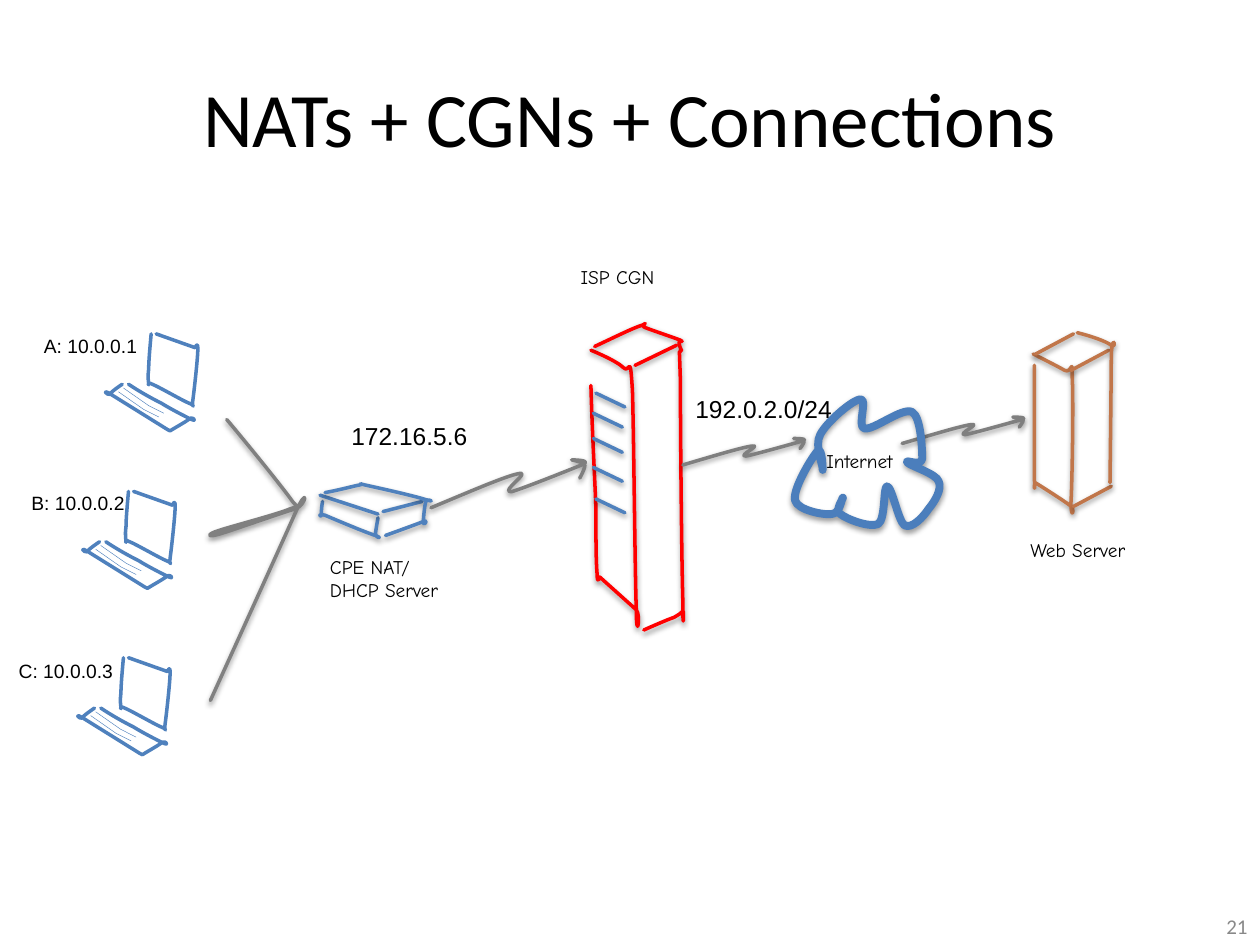
from lxml import etree
from pptx import Presentation
from pptx.dml.color import RGBColor
from pptx.enum import text
from pptx.oxml import ns
from pptx import util as u

HUES = {
    "ink": "000000", "page": "898989", "blue": "4F81BD", "cloud": "4B7EBC",
    "link": "808080", "wire": "7F7F7F", "red": "FF0000", "rust": "C1764A",
}
ALIGN = text.PP_ALIGN
SCREEN = [
    (1.2, 2.65), (1.19, 2.76, 1.18, 2.87, 1.18, 2.93), (1.17, 3, 1.18, 3.03, 1.18, 3.05),
    (1.19, 3.07, 1.15, 3.02, 1.21, 3.05), (1.26, 3.07, 1.45, 3.18, 1.5, 3.2),
    (1.56, 3.22, 1.52, 3.25, 1.53, 3.18), (1.54, 3.11, 1.57, 2.84, 1.57, 2.77),
    (1.57, 2.7, 1.55, 2.76, 1.55, 2.76), (1.24, 2.65), (1.27, 2.66),
]
KEYS = [
    (1.02, 3.05), (1.11, 3.11, 1.2, 3.16, 1.28, 3.2), (1.36, 3.25, 1.48, 3.31, 1.52, 3.33),
    (1.56, 3.35, 1.54, 3.31, 1.51, 3.32), (1.49, 3.34, 1.38, 3.4, 1.35, 3.42),
    (1.33, 3.41), (0.88, 3.13), (0.8, 3.08, 0.85, 3.14, 0.87, 3.13),
    (0.88, 3.11, 0.97, 3.05, 0.97, 3.05),
]
HATCH = [(0.94, 3.11), (1.14, 3.25), (1.26, 3.31)]
BOX = [
    [(2.56, 3.98), (2.55, 4.03, 2.55, 4.08, 2.55, 4.09), (2.55, 4.11, 2.51, 4.07, 2.58, 4.09),
     (2.65, 4.12, 2.91, 4.23, 2.98, 4.25), (3.05, 4.28, 2.98, 4.27, 2.98, 4.24),
     (2.98, 4.22, 3, 4.11, 3, 4.11)],
    [(2.54, 3.93), (3, 4.08)],
    [(3.04, 4.06), (3.35, 3.98)],
    [(2.58, 3.91), (2.69, 3.89, 2.8, 3.86, 2.85, 3.85), (2.91, 3.84, 2.81, 3.83, 2.9, 3.85),
     (2.99, 3.87, 3.31, 3.94, 3.39, 3.97), (3.47, 3.99, 3.38, 3.95, 3.38, 3.98),
     (3.37, 4.01, 3.36, 4.12, 3.36, 4.15), (3.36, 4.18, 3.41, 4.12, 3.36, 4.14),
     (3.31, 4.16, 3.06, 4.25, 3.06, 4.25)],
]
FAN = [
    (1.8, 3.33), (2.01, 3.58, 2.21, 3.83, 2.3, 3.95), (2.38, 4.07, 2.4, 4, 2.3, 4.04),
    (2.21, 4.08, 1.83, 4.18, 1.74, 4.21), (1.64, 4.24, 1.64, 4.27, 1.74, 4.24),
    (1.84, 4.21, 2.24, 4.07, 2.34, 4.04), (2.44, 4.01, 2.45, 3.83, 2.34, 4.08),
    (2.23, 4.33, 1.67, 5.56, 1.67, 5.56),
]
BOLT = [
    (0, 0), (0.24, -0.07, 0.47, -0.14, 0.55, -0.15), (0.63, -0.16, 0.43, -0.07, 0.5, -0.07),
    (0.56, -0.08, 0.88, -0.17, 0.95, -0.19), (1.01, -0.21, 0.88, -0.21, 0.88, -0.21),
    (0.88, -0.21, 0.95, -0.2, 0.96, -0.19), (0.97, -0.18, 0.93, -0.13, 0.93, -0.13),
]
TOWER = [
    [(4.69, 3.06), (4.7, 3.42, 4.72, 3.78, 4.73, 4.03), (4.73, 4.28, 4.73, 4.46, 4.74, 4.56),
     (4.74, 4.65, 4.76, 4.58, 4.76, 4.58), (5.05, 4.84), (5.09, 4.88, 5.05, 5.12, 5.05, 4.83),
     (5.04, 4.54, 5.03, 3.42, 5.02, 3.1), (5, 2.78, 5, 2.97, 4.95, 2.92),
     (4.89, 2.86, 4.69, 2.78, 4.69, 2.78)],
    [(4.72, 2.75), (4.87, 2.68, 5.03, 2.6, 5.1, 2.58), (5.16, 2.55, 5.07, 2.58, 5.12, 2.6),
     (5.17, 2.62, 5.35, 2.68, 5.4, 2.7), (5.44, 2.72, 5.38, 2.7, 5.39, 2.72),
     (5.39, 2.73, 5.4, 2.77, 5.41, 2.78), (5.41, 2.79, 5.4, 2.75, 5.4, 2.79),
     (5.39, 2.83, 5.39, 2.68, 5.4, 3.01), (5.4, 3.34, 5.41, 4.47, 5.42, 4.78),
     (5.42, 5.08, 5.43, 4.83, 5.42, 4.85), (5.4, 4.87, 5.4, 4.87, 5.35, 4.9),
     (5.29, 4.92, 5.11, 5, 5.11, 5)],
    [(5.04, 2.9), (5.37, 2.74)],
]
CLOUD = [
    (7.32, 3.64), (7.32, 3.57, 7.31, 3.31, 7.24, 3.27), (7.16, 3.23, 6.93, 3.42, 6.86, 3.4),
    (6.8, 3.39, 6.89, 3.16, 6.83, 3.17), (6.77, 3.17, 6.56, 3.35, 6.51, 3.45),
    (6.46, 3.54, 6.54, 3.71, 6.53, 3.73), (6.53, 3.75, 6.53, 3.54, 6.49, 3.58),
    (6.45, 3.62, 6.29, 3.88, 6.31, 3.97), (6.33, 4.05, 6.54, 4.09, 6.6, 4.08),
    (6.67, 4.08, 6.68, 3.95, 6.69, 3.95), (6.7, 3.95, 6.62, 4.05, 6.67, 4.08),
    (6.72, 4.12, 6.9, 4.19, 6.97, 4.16), (7.03, 4.12, 7.01, 3.86, 7.04, 3.86),
    (7.08, 3.86, 7.13, 4.14, 7.18, 4.17), (7.24, 4.2, 7.33, 4.1, 7.37, 4.04),
    (7.42, 3.98, 7.48, 3.88, 7.45, 3.82), (7.43, 3.76, 7.23, 3.7, 7.2, 3.67),
    (7.18, 3.64, 7.31, 3.71, 7.32, 3.64),
]
FRONT = [
    (8.21, 2.9), (8.21, 3.27, 8.21, 3.65, 8.21, 3.81), (8.22, 3.96, 8.19, 3.8, 8.23, 3.84),
    (8.28, 3.87, 8.45, 3.98, 8.49, 4.01), (8.54, 4.03, 8.5, 4.15, 8.5, 3.99),
    (8.51, 3.82, 8.52, 3.17, 8.51, 3), (8.51, 2.82, 8.51, 2.97, 8.45, 2.94),
    (8.4, 2.91, 8.2, 2.81, 8.2, 2.81),
]
SIDE = [
    (8.55, 2.64), (8.67, 2.67, 8.78, 2.71, 8.82, 2.74), (8.87, 2.77, 8.83, 2.63, 8.82, 2.81),
    (8.82, 2.99, 8.81, 3.83, 8.81, 3.83),
]


class Sketch:
    def __init__(self, slide, hues):
        self.slide, self.hues = slide, hues

    def hue(self, name):
        return RGBColor.from_string(self.hues[name])

    def label(self, words, x, y, w, h, size=11, face="Arial", hue="ink", align=ALIGN.LEFT, grow=True):
        box = self.slide.shapes.add_textbox(*map(u.Inches, (x, y, w, h)))
        frame = box.text_frame
        form = {
            "word_wrap": not grow,
            "auto_size": text.MSO_AUTO_SIZE.SHAPE_TO_FIT_TEXT if grow else text.MSO_AUTO_SIZE.NONE,
            "vertical_anchor": text.MSO_ANCHOR.TOP if grow else text.MSO_ANCHOR.MIDDLE,
        }
        for key, value in form.items():
            setattr(frame, key, value)
        frame.text = words
        for para in frame.paragraphs:
            para.alignment = align
            font = para.runs[0].font
            for key, value in {"size": u.Pt(size), "name": face}.items():
                setattr(font, key, value)
            font.color.rgb = self.hue(hue)

    def bend(self, shape, segs):
        for node, seg in zip(list(shape.element.iter(ns.qn("a:lnTo"))), segs):
            if len(seg) == 1:
                continue
            node.tag = ns.qn("a:cubicBezTo")
            node.remove(node[0])
            for x, y in seg:
                etree.SubElement(node, ns.qn("a:pt"), x=str(x - shape.left), y=str(y - shape.top))

    def stroke(self, path, hue, width=2, at=(0, 0), scale=(1, 1), shade=True, close=False):
        segs = [[tuple(u.Inches(a + s * v) for a, s, v in zip(at, scale, seg[k:k + 2]))
                 for k in range(0, len(seg), 2)] for seg in path]
        pen = self.slide.shapes.build_freeform(*segs[0][0])
        pen.add_line_segments([seg[-1] for seg in segs[1:]], close=close)
        shape = pen.convert_to_shape()
        self.bend(shape, segs[1:])
        shape.fill.background()
        shape.line.width = u.Pt(width)
        shape.line.color.rgb = self.hue(hue)
        shape.shadow.inherit = False
        props = shape.element.spPr
        line = props.find(ns.qn("a:ln"))
        line.set("cap", "rnd")
        etree.SubElement(line, ns.qn("a:round"))
        if shade:
            cast = etree.SubElement(props.find(ns.qn("a:effectLst")), ns.qn("a:outerShdw"),
                                    blurRad="40000", dist="20000", dir="5400000", rotWithShape="0")
            tint = etree.SubElement(cast, ns.qn("a:srgbClr"), val=self.hues["ink"])
            etree.SubElement(tint, ns.qn("a:alpha"), val="38000")

    def laptop(self, at):
        x, y = at
        for path in (SCREEN, KEYS):
            self.stroke(path, "blue", at=at, shade=False)
        for dx, dy in ((0, 0), (0.04, -0.03)):
            self.stroke(HATCH, "blue", 0.25, (x + dx, y + dy), shade=False)


def main():
    deck = Presentation()
    deck.slide_width, deck.slide_height = u.Inches(10), u.Inches(7.5)
    art = Sketch(deck.slides.add_slide(deck.slide_layouts[6]), HUES)
    art.label("NATs + CGNs + Connections", 0.29, 0.3, 9.42, 1.25, 44, "Calibri", align=ALIGN.CENTER, grow=False)
    art.label("21", 7.67, 7.15, 2.33, 0.4, 12, "Calibri", "page", ALIGN.RIGHT, False)

    for at in ((-0.18, 1.25), (-0.22, 2.57), (0, 0)):
        art.laptop(at)
    for path in BOX:
        art.stroke(path, "blue")
    art.stroke(FAN, "link")
    art.stroke(BOLT, "wire", at=(3.42, 4.03), scale=(1.27, 1.81))
    for path in TOWER:
        art.stroke(path, "red")
    for at in ((4.73, 3.12), (4.71, 3.28), (4.71, 3.48), (4.71, 3.71), (4.73, 3.96)):
        art.stroke([(0, 0), (0.23, 0.11)], "blue", at=at)
    for at in ((5.42, 3.69), (7.16, 3.52)):
        art.stroke(BOLT, "wire", at=at)
    art.stroke(CLOUD, "cloud", 4.5, close=True)
    art.stroke(FRONT, "rust")
    for at in ((8.5, 2.94), (8.52, 4.02), (8.22, 2.81)):
        art.stroke([(0, 0), (0.3, -0.16)], "rust", at=at)
    art.stroke(SIDE, "rust")

    for words, x, y, w in (("A: 10.0.0.1", 0.25, 2.6, 0.96), ("B: 10.0.0.2", 0.15, 3.85, 0.95),
                           ("C: 10.0.0.3", 0.05, 5.18, 0.96)):
        art.label(words, x, y, w, 0.29)
    for words, x, y, w, h in (("CPE NAT/\nDHCP Server", 2.52, 4.36, 1.31, 0.66), ("ISP CGN", 4.51, 2.06, 1.04, 0.29),
                              ("Web Server", 8.08, 4.22, 1.16, 0.29), ("Internet", 6.46, 3.52, 0.85, 0.29)):
        art.label(words, x, y, w, h, face="Comic Neue")
    for words, x, y, w in (("192.0.2.0/24", 5.42, 3.08, 1.29), ("172.16.5.6", 2.69, 3.29, 1.13)):
        art.label(words, x, y, w, 0.34, 14)
    deck.save("out.pptx")


if __name__ == "__main__":
    main()
